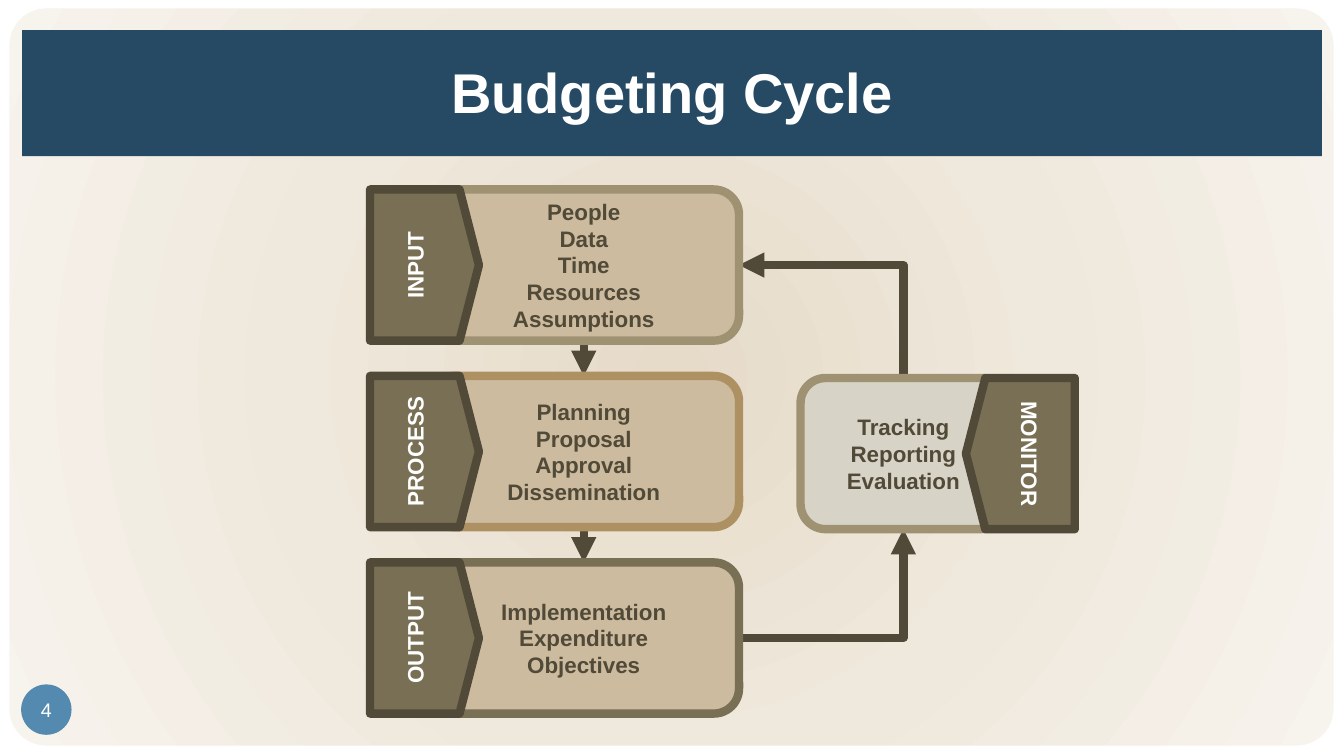
from pptx import Presentation
from pptx.dml.color import RGBColor
from pptx.enum.shapes import MSO_CONNECTOR, MSO_SHAPE
from pptx.enum.text import MSO_ANCHOR, PP_ALIGN
from pptx.oxml import parse_xml
from pptx.oxml.ns import nsdecls, qn
from pptx.util import Inches, Pt
from lxml.etree import SubElement

HUES = {
    "white": "FFFFFF", "navy": "264A64", "blue": "548AB0", "dark": "514A38",
    "olive": "796F54", "sand": "CCBB9E", "stone": "D8D3C7",
    "khaki": "9E9273", "gold": "AD9163",
}
HEAD = {"size": Pt(40), "bold": True, "name": "Arial"}
BODY = {"size": Pt(16), "bold": True, "name": "Arial"}
PAGE = {"size": Pt(14), "bold": False, "name": "Arial"}


def draw(kind, place, fill, line=None, width=6):
    shape = slide.shapes.add_shape(kind, *map(Inches, place))
    shape.shadow.inherit = False
    shape.fill.solid()
    shape.fill.fore_color.rgb = RGBColor.from_string(HUES[fill])
    if line:
        shape.line.color.rgb = RGBColor.from_string(HUES[line])
        shape.line.width = Pt(width)
        SubElement(shape.line._get_or_add_ln(), qn("a:round"))
    else:
        shape.line.fill.background()
    return shape


def write(shape, text, form, hue):
    frame = shape.text_frame
    frame.text = text
    frame.vertical_anchor = MSO_ANCHOR.MIDDLE
    for para in frame.paragraphs:
        para.alignment = PP_ALIGN.CENTER
        for key, value in form.items():
            setattr(para.runs[0].font, key, value)
        para.runs[0].font.color.rgb = RGBColor.from_string(HUES[hue])
    return frame


deck = Presentation()
deck.slide_width, deck.slide_height = Inches(13.33), Inches(7.5)
slide = deck.slides.add_slide(deck.slide_layouts[5])
tree = slide.shapes._spTree
slide.background.fill.solid()
slide.background.fill.fore_color.rgb = RGBColor.from_string(HUES["white"])

panel = draw(MSO_SHAPE.ROUNDED_RECTANGLE, (0.09, 0.08, 13.14, 7.32), "white", "white", 0.5)
panel.adjustments[0] = 0.05
stops = "".join(
    f'<a:gs pos="{spot}"><a:srgbClr val="{hue}"/></a:gs>'
    for spot, hue in ((0, "E6DBC9"), (50000, "EFE8DC"), (100000, "F7F3ED"))
)
glow = parse_xml(
    f'<a:gradFill {nsdecls("a")} rotWithShape="1"><a:gsLst>{stops}</a:gsLst>'
    '<a:path path="circle"><a:fillToRect l="50000" t="50000" r="50000" b="50000"/>'
    "</a:path></a:gradFill>"
)
solid = panel._element.spPr.find(qn("a:solidFill"))
solid.getparent().replace(solid, glow)
tree.insert(2, panel._element)

title = slide.shapes.title
spots = {"left": 0.22, "top": 0.3, "width": 12.89, "height": 1.25}
for key, value in spots.items():
    setattr(title, key, Inches(value))
title.fill.solid()
title.fill.fore_color.rgb = RGBColor.from_string(HUES["navy"])
write(title, "Budgeting Cycle", HEAD, "white").margin_bottom = Inches(0.1)

badge = draw(MSO_SHAPE.OVAL, (0.21, 6.79, 0.5, 0.5), "blue")
frame = write(badge, "4", PAGE, "white")
for side in ("left", "top", "right", "bottom"):
    setattr(frame, f"margin_{side}", 0)
frame.word_wrap = False

steps = [
    ("INPUT", "People\nData\nTime\nResources\nAssumptions", "khaki"),
    ("PROCESS", "Planning\nProposal\nApproval\nDissemination", "gold"),
    ("OUTPUT", "Implementation\nExpenditure\nObjectives", "olive"),
]
cards = [
    (name, text, "sand", line, 4.25, 1.88 + 1.85 * row, 3.08, 3.67, 0)
    for row, (name, text, line) in enumerate(steps)
]
cards.append(("MONITOR", "Tracking\nReporting\nEvaluation", "stone", "khaki",
              7.94, 3.75, 2.04, 9.58, 180))
boxes = {}
for name, text, fill, line, left, top, width, start, turn in cards:
    box = draw(MSO_SHAPE.ROUNDED_RECTANGLE, (left, top, width, 1.5), fill, line)
    write(box, text, BODY, "dark")
    boxes[name] = box
    tag = draw(MSO_SHAPE.RIGHT_ARROW, (start, top, 1.08, 1.5), "olive", "dark")
    tag.adjustments[0], tag.adjustments[1] = 1, 0.178
    tag.rotation = turn
    write(tag, name, BODY, "white")._txBody.bodyPr.set("vert", "vert270")

TOP, BASE, RIGHT = 0, 2, 3
links = [
    ("INPUT", BASE, "PROCESS", TOP, "line", "tailEnd"),
    ("PROCESS", BASE, "OUTPUT", TOP, "line", "tailEnd"),
    ("OUTPUT", RIGHT, "MONITOR", BASE, "bentConnector2", "tailEnd"),
    ("INPUT", RIGHT, "MONITOR", TOP, "bentConnector2", "headEnd"),
]
for source, out, target, into, form, end in links:
    link = slide.shapes.add_connector(MSO_CONNECTOR.STRAIGHT, 0, 0, 0, 0)
    link.begin_connect(boxes[source], out)
    link.end_connect(boxes[target], into)
    link.line.color.rgb = RGBColor.from_string(HUES["dark"])
    link.line.width = Pt(6)
    props = link._element.spPr
    props.find(qn("a:prstGeom")).set("prst", form)
    edge = link.line._get_or_add_ln()
    SubElement(edge, qn("a:round"))
    SubElement(edge, qn(f"a:{end}"), type="triangle")
    SubElement(props, qn("a:effectLst"))
    tree.insert(4, link._element)

deck.save("out.pptx")
